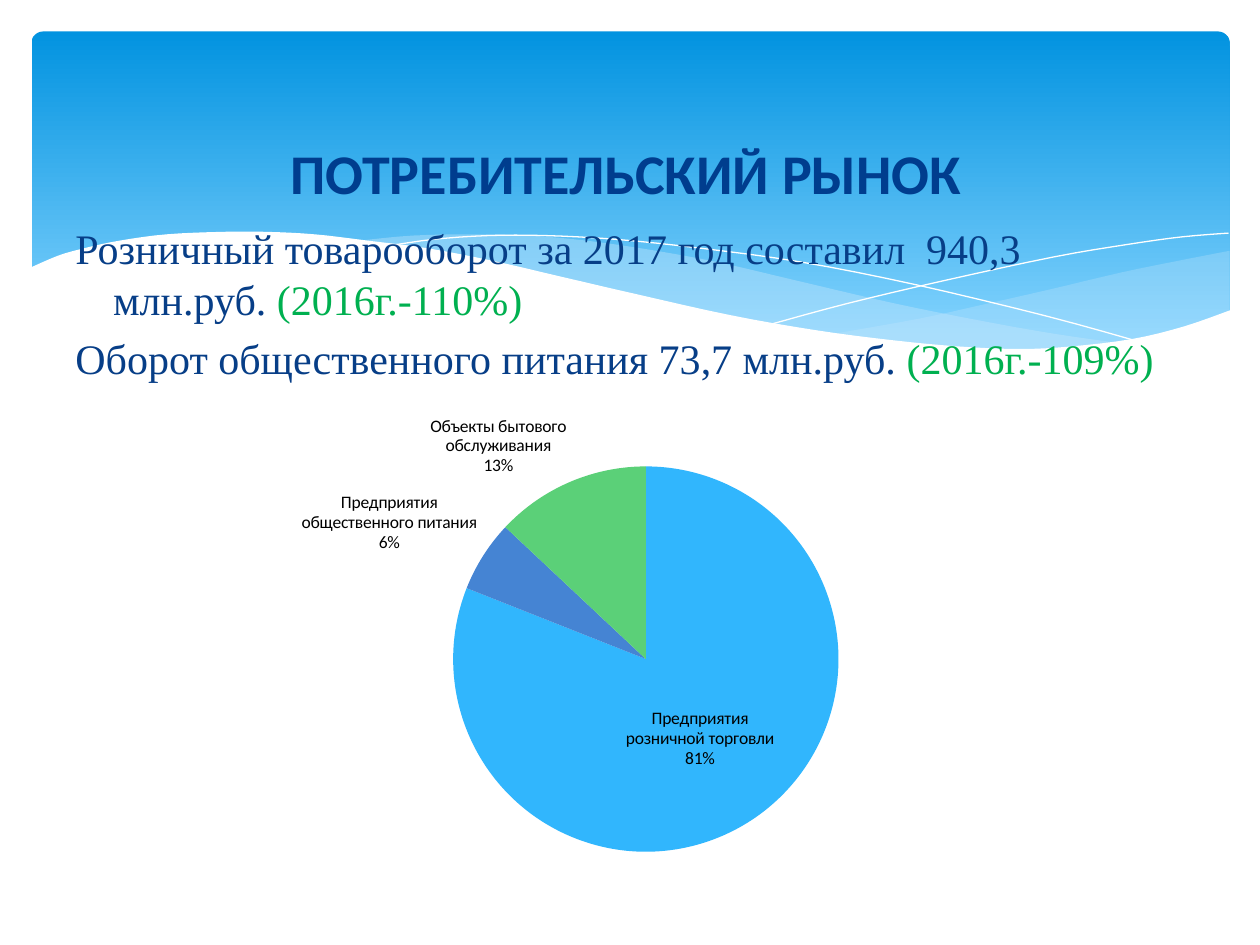
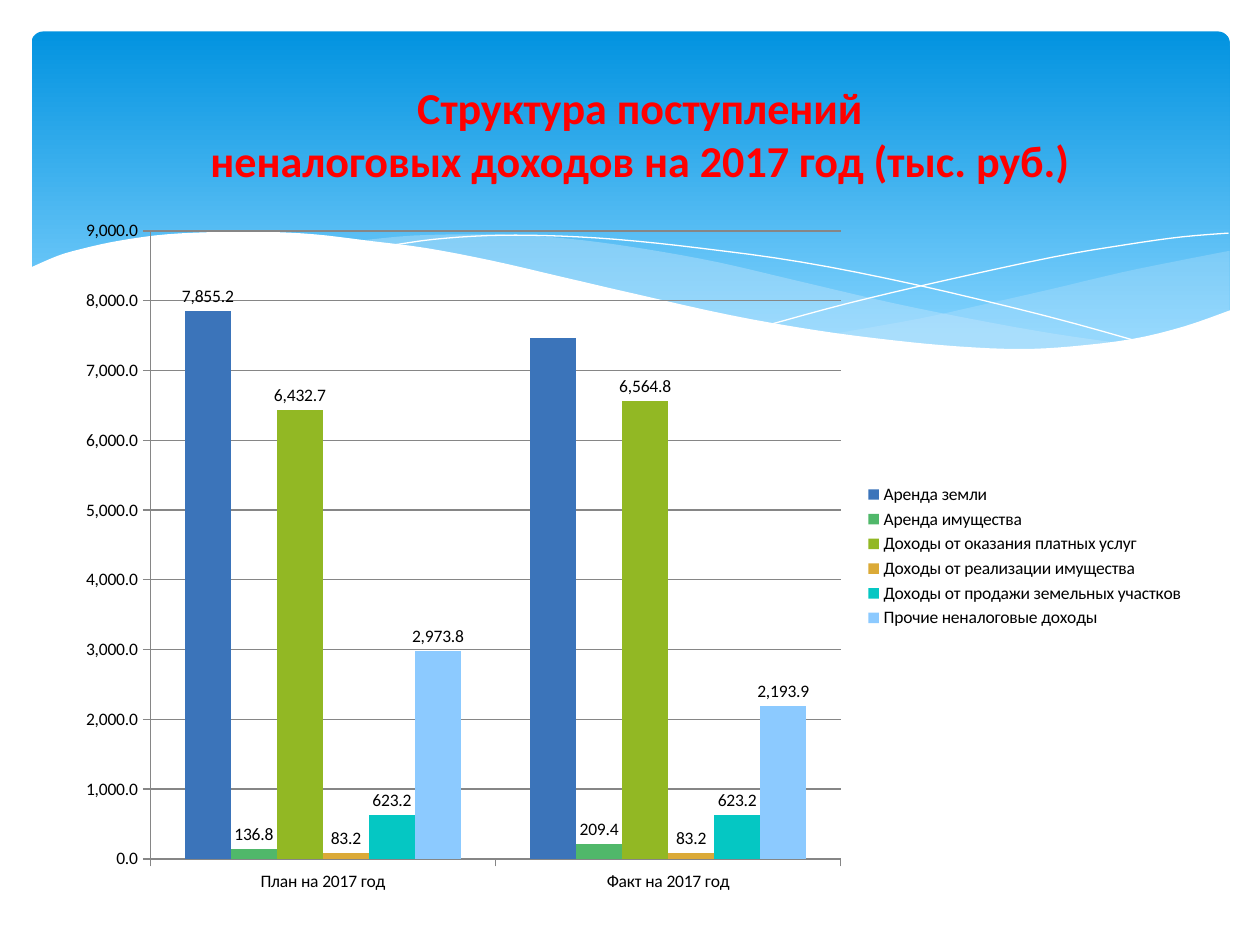
from lxml import etree
from pptx import Presentation
from pptx.chart.data import CategoryChartData
from pptx.dml.color import RGBColor
from pptx.enum.chart import XL_CHART_TYPE, XL_LABEL_POSITION, XL_LEGEND_POSITION, XL_TICK_MARK
from pptx.enum.shapes import MSO_SHAPE
from pptx.enum.text import MSO_ANCHOR, MSO_AUTO_SIZE, PP_ALIGN
from pptx.oxml.ns import qn
from pptx.util import Inches, Pt

PIE, COLUMNS = XL_CHART_TYPE.PIE, XL_CHART_TYPE.COLUMN_CLUSTERED
CENTER_LABEL, OUTER_LABEL = XL_LABEL_POSITION.CENTER, XL_LABEL_POSITION.OUTSIDE_END
LEGEND_RIGHT = XL_LEGEND_POSITION.RIGHT
TICK_OUT, TICK_NONE = XL_TICK_MARK.OUTSIDE, XL_TICK_MARK.NONE
ROUNDED = MSO_SHAPE.ROUNDED_RECTANGLE
MIDDLE, CENTERED, NO_FIT = MSO_ANCHOR.MIDDLE, PP_ALIGN.CENTER, MSO_AUTO_SIZE.NONE

COLORS = {
    "white": "FFFFFF", "black": "000000", "band_top": "0293E0", "band_end": "83D3FE",
    "wave": "C6E7FC", "market_title": "003D8E", "income_title": "FF0000",
    "text": "073E87", "growth": "00B050", "axis": "868686",
    "retail": "31B6FD", "catering": "4584D3", "services": "5BD078",
    "land_rent": "3B74BA", "property_rent": "50B86A", "paid_services": "92B824",
    "property_sale": "DBAA37", "land_sale": "05C7C3", "other": "8CCAFF",
}
HEAD_FONT, BODY_FONT = "Calibri", "Times New Roman"
NUMBER = "#,##0.0"

MARKET_TITLE = ("ПОТРЕБИТЕЛЬСКИЙ РЫНОК", (0.47, 0.78, 9, 1.17), 32, "market_title")
TURNOVER = [
    ("Розничный товарооборот за 2017 год составил  940,3 млн.руб. ", "(2016г.-110%)"),
    ("Оборот общественного питания 73,7 млн.руб. ", "(2016г.-109%)"),
]
ENTERPRISES = [
    ("Предприятия розничной торговли", 81, "retail", CENTER_LABEL),
    ("Предприятия общественного питания", 6, "catering", OUTER_LABEL),
    ("Объекты бытового обслуживания", 13, "services", OUTER_LABEL),
]
INCOME_TITLE = ("Структура поступлений \vненалоговых доходов на 2017 год (тыс. руб.) ",
                (0.62, 0.62, 9, 0.87), 25.2, "income_title")
PERIODS = ["План на 2017 год", "Факт на 2017 год"]
INCOME = [
    ("Аренда земли", (7855.2, 7469.2), "land_rent"),
    ("Аренда имущества", (136.8, 209.4), "property_rent"),
    ("Доходы от оказания платных услуг", (6432.7, 6564.8), "paid_services"),
    ("Доходы от реализации имущества", (83.2, 83.2), "property_sale"),
    ("Доходы от продажи земельных участков", (623.2, 623.2), "land_sale"),
    ("Прочие неналоговые доходы", (2973.8, 2193.9), "other"),
]

RIGHT_WAVE = [
    [(9.76, 1.99), (9.35, 2.07), (8.91, 2.16), (8.32, 2.3), (7.79, 2.42), (7.29, 2.53), (6.61, 2.65)],
    [(6.61, 2.65), (7.05, 2.71), (7.57, 2.76), (8.14, 2.78), (8.63, 2.75), (9.05, 2.69),
     (9.42, 2.59), (9.76, 2.47)],
]
LONG_WAVE = [
    [(8.93, 2.73), (8.37, 2.65), (7.75, 2.54), (7.06, 2.4), (6.29, 2.22), (5.69, 2.08),
     (5.14, 1.98), (4.65, 1.91), (4.2, 1.87), (3.8, 1.86), (3.28, 1.87), (2.86, 1.91)],
    [(2.86, 1.91), (3.42, 1.99), (4.04, 2.11), (4.49, 2.22), (5.3, 2.4), (6.01, 2.55),
     (6.65, 2.66), (7.22, 2.74), (7.73, 2.77), (8.28, 2.78), (8.93, 2.73)],
]
FALLING_LINE = [[(3.09, 1.95), (3.44, 1.9), (3.87, 1.87), (4.33, 1.87), (4.89, 1.9), (5.56, 1.97),
                 (6.36, 2.08), (7.27, 2.26), (8.31, 2.51), (9.07, 2.72)]]
RISING_LINE = [[(6.13, 2.57), (6.72, 2.41), (7.48, 2.23), (8.36, 2.04), (8.95, 1.94),
                (9.38, 1.88), (9.75, 1.85)]]
WHITE_WAVE = [
    [(9.77, 2.46), (9.4, 2.59), (8.99, 2.69), (8.5, 2.75), (8.09, 2.77), (7.61, 2.75),
     (7.08, 2.7), (6.47, 2.62), (5.79, 2.5), (5.03, 2.33), (4.47, 2.2), (3.91, 2.07),
     (3.39, 1.97), (2.92, 1.91), (2.5, 1.86), (2.11, 1.84), (1.77, 1.84), (1.32, 1.86),
     (0.95, 1.91), (0.67, 1.97), (0.46, 2.03), (0.23, 2.13)],
    [(0.23, 3.29), (9.77, 3.29)],
]
WAVES = [
    (RIGHT_WAVE, "wave", 29), (LONG_WAVE, "wave", 40),
    (FALLING_LINE, None, None), (RISING_LINE, None, None),
    (WHITE_WAVE, "white", 100),
]


def rgb(name):
    return RGBColor.from_string(COLORS[name])


def box(place):
    return [Inches(length) for length in place]


def style(font, face, size, color, bold=None):
    font.name, font.size, font.bold = face, Pt(size), bold
    font.color.rgb = rgb(color)


def paint(target, color):
    target.fill.solid()
    target.fill.fore_color.rgb = rgb(color)


def smooth(knots, steps=4):
    padded = [knots[0], *knots, knots[-1]]
    curve = [knots[0]]
    for a, b, c, d in zip(padded, padded[1:], padded[2:], padded[3:]):
        for step in range(1, steps + 1):
            t = step / steps
            curve.append(tuple(
                (2 * q + (r - p) * t + (2 * p - 5 * q + 4 * r - s) * t ** 2
                 + (3 * q - p - 3 * r + s) * t ** 3) / 2
                for p, q, r, s in zip(a, b, c, d)))
    return curve


def draw_wave(slide, edges, color, opacity):
    outline = [(Inches(x), Inches(y)) for edge in edges for x, y in smooth(edge)]
    builder = slide.shapes.build_freeform(*outline[0])
    builder.add_line_segments(outline[1:], close=color is not None)
    wave = builder.convert_to_shape()
    if color:
        paint(wave, color)
        wave.line.fill.background()
        tint = wave.element.spPr.find(".//" + qn("a:srgbClr"))
        etree.SubElement(tint, qn("a:alpha")).set("val", str(opacity * 1000))
    else:
        wave.fill.background()
        wave.line.color.rgb = rgb("white")
        wave.line.width = Pt(0)
    return wave


def draw_band(slide):
    band = slide.shapes.add_shape(ROUNDED, *box((0.25, 0.25, 9.51, 2.7)))
    band.adjustments[0] = 0.034
    band.line.fill.background()
    band.fill.gradient()
    band.fill.gradient_angle = 270
    for stop, color, position in zip(band.fill.gradient_stops, ("band_top", "band_end"), (0, 0.9)):
        stop.color.rgb = rgb(color)
        stop.position = position
    return band


def decorate_layout(slide):
    decor = [draw_band(slide)] + [draw_wave(slide, *wave) for wave in WAVES]
    for number, part in enumerate(decor, 101):
        part.shadow.inherit = False
        part.element.find(".//" + qn("p:cNvPr")).set("id", str(number))
        slide.slide_layout.shapes.element.append(part.element)


def set_title(slide, words, place, size, color):
    title = slide.shapes.title
    title.left, title.top, title.width, title.height = box(place)
    frame = title.text_frame
    frame.text = words
    frame.auto_size, frame.vertical_anchor = NO_FIT, MIDDLE
    for line in frame.paragraphs:
        line.alignment = CENTERED
        style(line.font, HEAD_FONT, size, color, True)


def add_chart(slide, kind, place, data, plot_area):
    chart = slide.shapes.add_chart(kind, *box(place), data).chart
    style(chart.font, HEAD_FONT, 10, "black")
    chart.has_title = False
    area = chart.element.chart.plotArea
    for old in area.findall(qn("c:layout")):
        area.remove(old)
    layout = etree.Element(qn("c:layout"))
    manual = etree.SubElement(layout, qn("c:manualLayout"))
    settings = [("layoutTarget", "inner"), ("xMode", "edge"), ("yMode", "edge"),
                *zip("xywh", plot_area)]
    for tag, value in settings:
        etree.SubElement(manual, qn("c:" + tag)).set("val", str(value))
    area.insert(0, layout)
    return chart


def add_turnover(slide):
    frame = slide.shapes.add_textbox(*box((0.5, 1.72, 9, 1.4))).text_frame
    frame.word_wrap = True
    for index, (statement, growth) in enumerate(TURNOVER):
        line = frame.add_paragraph() if index else frame.paragraphs[0]
        line.space_before = Pt(4.8)
        indent = line._p.get_or_add_pPr()
        indent.set("marL", str(Inches(0.3)))
        indent.set("indent", str(-Inches(0.3)))
        for words, color in ((statement, "text"), (growth, "growth")):
            run = line.add_run()
            run.text = words
            style(run.font, BODY_FONT, 24, color)


def add_enterprises(slide):
    data = CategoryChartData()
    data.categories = [name for name, *_ in ENTERPRISES]
    data.add_series("Series 1", [share for _, share, *_ in ENTERPRISES])
    chart = add_chart(slide, PIE, (0.94, 3.12, 8.05, 4.14), data, (0.33, 0.14, 0.38, 0.74))
    chart.has_legend = False
    shares = chart.plots[0].series[0]
    for index, (_, _, color, position) in enumerate(ENTERPRISES):
        paint(shares.points[index].format, color)
        shares.points[index].data_label.position = position
    for label in shares.data_labels._element.findall(qn("c:dLbl")):
        for tag, shown in (("showVal", 0), ("showCatName", 1), ("showPercent", 1)):
            label.find(qn("c:" + tag)).set("val", str(shown))
        etree.SubElement(label, qn("c:separator")).text = "\n"


def add_income(slide):
    data = CategoryChartData(number_format=NUMBER)
    data.categories = PERIODS
    for name, amounts, _ in INCOME:
        data.add_series(name, amounts)
    chart = add_chart(slide, COLUMNS, (0.5, 1.64, 9, 5.55), data, (0.077, 0.035, 0.609, 0.898))
    chart.has_legend = True
    chart.legend.position = LEGEND_RIGHT
    chart.legend.include_in_layout = False
    plot = chart.plots[0]
    plot.gap_width, plot.overlap, plot.vary_by_categories = 150, 0, False
    for axis in (chart.category_axis, chart.value_axis):
        axis.major_tick_mark, axis.minor_tick_mark = TICK_OUT, TICK_NONE
        axis.format.line.color.rgb = rgb("axis")
    amounts_axis = chart.value_axis
    amounts_axis.minimum_scale, amounts_axis.maximum_scale, amounts_axis.major_unit = 0, 9000, 1000
    amounts_axis.major_gridlines.format.line.color.rgb = rgb("axis")
    amounts_axis.tick_labels.number_format = NUMBER
    amounts_axis.tick_labels.number_format_is_linked = False
    land_rent, *others = plot.series
    for source, (_, _, color) in zip(plot.series, INCOME):
        paint(source.format, color)
    land_rent.points[0].data_label.position = OUTER_LABEL
    land_rent.data_labels.show_value = False
    for source in others:
        labels = source.data_labels
        labels.show_value, labels.position = True, OUTER_LABEL
        labels.number_format, labels.number_format_is_linked = NUMBER, False


def main():
    deck = Presentation()
    deck.slide_width, deck.slide_height = Inches(10), Inches(7.5)
    title_only = deck.slide_layouts[5]
    market, income = [deck.slides.add_slide(title_only) for _ in range(2)]
    decorate_layout(market)
    set_title(market, *MARKET_TITLE)
    add_turnover(market)
    add_enterprises(market)
    set_title(income, *INCOME_TITLE)
    add_income(income)
    deck.save("out.pptx")


if __name__ == "__main__":
    main()
